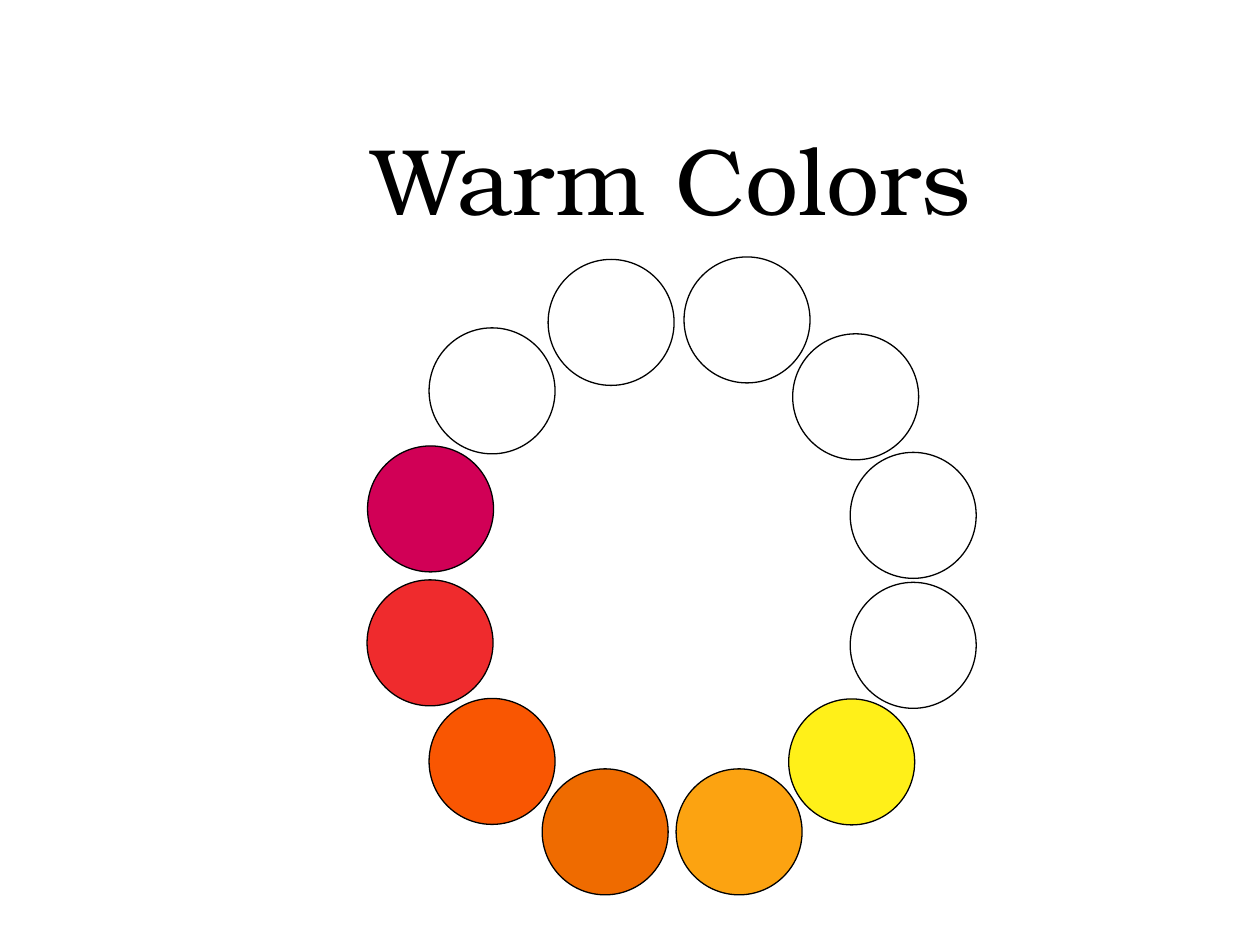
import pptx
import pptx.dml.color
import pptx.enum.shapes
import pptx.enum.text
import pptx.util

Cm = pptx.util.Cm
Pt = pptx.util.Pt


def color(hex_string):
    return pptx.dml.color.RGBColor.from_string(hex_string)


class SlideBuilder:
    """Holds the style and the current slide."""

    font_name = "TeX Gyre Bonum"
    ink = "000000"
    title_size = 54
    line_width = 0.75
    circle_size = 2.54
    inset = 0.1

    def __init__(self, presentation):
        title_only = presentation.slide_layouts[5]
        self.slide = presentation.slides.add_slide(title_only)

    def title(self, text, left, top, width, height):
        shape = self.slide.shapes.title
        shape.left, shape.top = Cm(left), Cm(top)
        shape.width, shape.height = Cm(width), Cm(height)
        frame = shape.text_frame
        frame.word_wrap = True
        frame.auto_size = pptx.enum.text.MSO_AUTO_SIZE.NONE
        frame.vertical_anchor = pptx.enum.text.MSO_ANCHOR.TOP
        frame.margin_left = frame.margin_right = Cm(self.inset)
        frame.margin_top = frame.margin_bottom = Cm(self.inset)
        paragraph = frame.paragraphs[0]
        paragraph.alignment = pptx.enum.text.PP_ALIGN.CENTER
        run = paragraph.add_run()
        run.text = text
        run.font.name = self.font_name
        run.font.size = Pt(self.title_size)
        run.font.color.rgb = color(self.ink)

    def circle(self, left, top, fill=None):
        size = Cm(self.circle_size)
        shape = self.slide.shapes.add_shape(
            pptx.enum.shapes.MSO_SHAPE.OVAL, Cm(left), Cm(top), size, size)
        shape.shadow.inherit = False
        if fill:
            shape.fill.solid()
            shape.fill.fore_color.rgb = color(fill)
        else:
            shape.fill.background()
        shape.line.color.rgb = color(self.ink)
        shape.line.width = Pt(self.line_width)


# Color wheel, clockwise from the top: left, top, fill (None for cool colors)
WHEEL = [
    (11.05, 5.23, None),
    (13.79, 5.18, None),
    (15.98, 6.73, None),
    (17.14, 9.12, None),
    (17.14, 11.74, None),
    (15.9, 14.09, "FFF019"),
    (13.63, 15.5, "FCA311"),
    (10.93, 15.5, "EF6B00"),
    (8.65, 14.08, "F95602"),
    (7.4, 11.69, "EF2B2D"),
    (7.41, 8.99, "D10056"),
    (8.65, 6.61, None),
]


def main():
    presentation = pptx.Presentation()
    presentation.slide_width = Cm(25.4)
    presentation.slide_height = Cm(19.05)
    builder = SlideBuilder(presentation)

    # Heading
    builder.title("Warm Colors", 5.28, 2.34, 16.51, 2.87)

    # Wheel
    for left, top, fill in WHEEL:
        builder.circle(left, top, fill)

    presentation.save("out.pptx")


if __name__ == "__main__":
    main()
